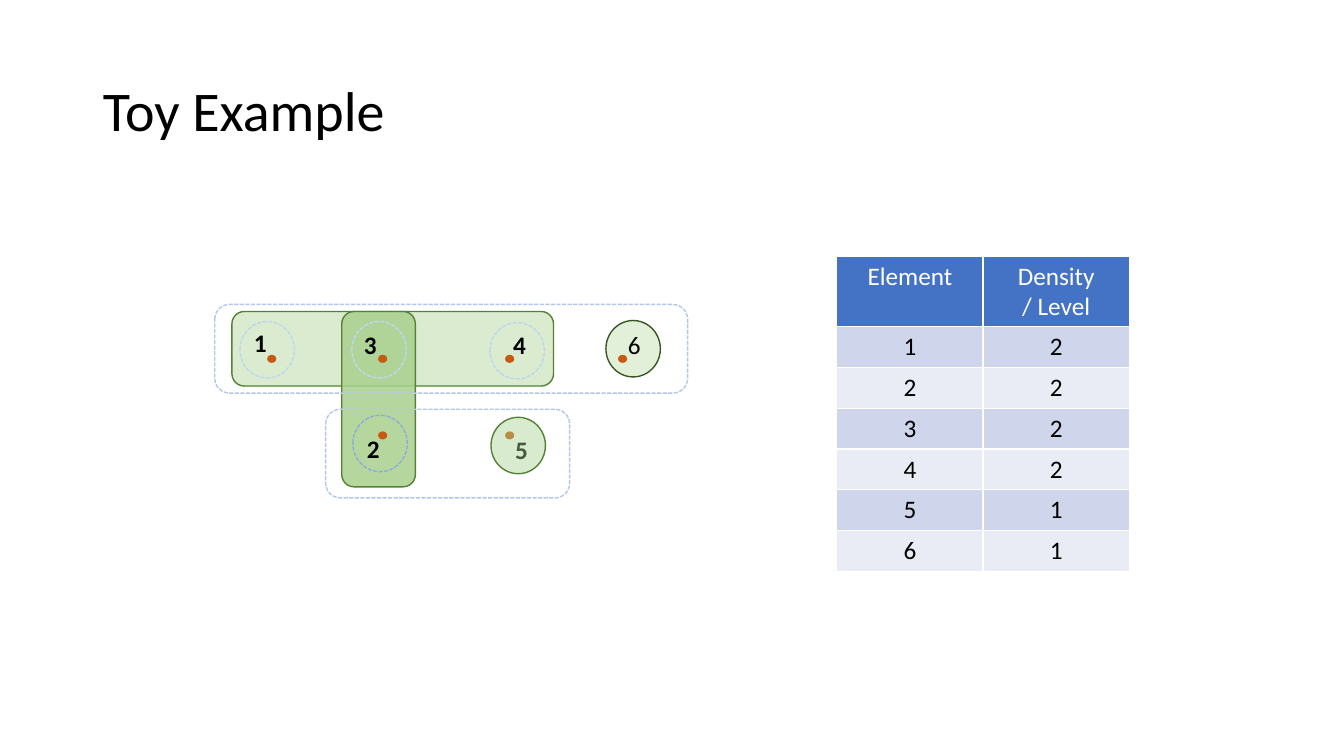
from lxml import etree
from pptx import Presentation
from pptx.dml.color import RGBColor
from pptx.enum import dml, shapes, text
from pptx.oxml import ns
from pptx.util import Inches, Pt

BLACK = RGBColor(0x00, 0x00, 0x00)
WHITE = RGBColor(0xFF, 0xFF, 0xFF)
GREEN = RGBColor(0xA9, 0xD1, 0x8E)
PALE_GREEN = RGBColor(0xE2, 0xF0, 0xD9)
MID_GREEN = RGBColor(0x54, 0x82, 0x35)
DARK_GREEN = RGBColor(0x38, 0x57, 0x23)
ORANGE = RGBColor(0xC5, 0x5A, 0x11)
SKY = RGBColor(0xBD, 0xD7, 0xEE)
STEEL = RGBColor(0x8F, 0xAA, 0xDC)
LAVENDER = RGBColor(0xB4, 0xC7, 0xE7)
HEADER_BLUE = RGBColor(0x44, 0x72, 0xC4)
BANDS = (RGBColor(0xCF, 0xD5, 0xEA), RGBColor(0xE9, 0xEB, 0xF5))

TITLE = "Toy Example"
HEADER = ("Element", "Density\n/ Level")
DENSITIES = {1: 2, 2: 2, 3: 2, 4: 2, 5: 1, 6: 1}

ROUNDED = shapes.MSO_SHAPE.ROUNDED_RECTANGLE
OVAL = shapes.MSO_SHAPE.OVAL
RING = (0.54, 0.56)
DOT = (0.09, 0.08)
LABEL = (0.33, 0.4)
UPPER_DOTS, LOWER_DOTS = 3.52, 4.28

# left, top of each ring and its format, below and above the labels
ROW_SET = (2.3, 3.09, 3.19, 0.74)
COLUMN_SET = (3.39, 3.09, 0.73, 1.74)
RINGS_UNDER_COLUMN = [
    (6.01, 3.18, dict(fill=PALE_GREEN, line=DARK_GREEN)),
    (4.86, 3.2, dict(line=SKY, dashed=True)),
]
RINGS_OVER_COLUMN = [
    (2.38, 3.19, dict(line=SKY, dashed=True)),
    (3.49, 3.19, dict(line=SKY, dashed=True)),
]
RINGS_OVER_LABELS = [
    (3.5, 4.12, dict(line=STEEL, dashed=True)),
    (4.87, 4.14, dict(fill=GREEN, opacity=43, line=MID_GREEN)),
]
DOTS = [(x, UPPER_DOTS) for x in (3.75, 5.01, 2.65, 6.13)]
DOTS += [(x, LOWER_DOTS) for x in (3.75, 5.01)]
LABELS = [
    ("1", 2.42, 3.2), ("3", 3.51, 3.22), ("2", 3.54, 4.25),
    ("4", 4.99, 3.22), ("5", 5.01, 4.26), ("6", 6.13, 3.22),
]
LEVELS = [(3.23, 4.06, 2.42, 0.88), (2.13, 3.02, 4.69, 0.88)]

TABLE_LEFT, TABLE_TOP = 8.3, 2.54
COLUMN_WIDTH, HEADER_HEIGHT, ROW_HEIGHT = 1.45, 0.7, 0.405


def write(frame, wording, size=18, color=BLACK, bold=False, align=None, spacing=None):
    frame.text = wording
    for paragraph in frame.paragraphs:
        paragraph.alignment = align
        paragraph.line_spacing = spacing
        font = paragraph.font
        font.name, font.size, font.bold = "Calibri", Pt(size), bold
        font.color.rgb = color


def draw(slide, preset, box, fill=None, opacity=100, line=None, dashed=False):
    shape = slide.shapes.add_shape(preset, *map(Inches, box))
    shape.shadow.inherit = False
    if fill is None:
        shape.fill.background()
    else:
        shape.fill.solid()
        shape.fill.fore_color.rgb = fill
        if opacity < 100:
            color = shape.fill._xPr.find(".//" + ns.qn("a:srgbClr"))
            etree.SubElement(color, ns.qn("a:alpha"), val=str(opacity * 1000))
    if line is None:
        shape.line.fill.background()
    else:
        shape.line.color.rgb = line
        shape.line.width = Pt(1)
        if dashed:
            shape.line.dash_style = dml.MSO_LINE.SQUARE_DOT


def draw_rings(slide, rings):
    for left, top, style in rings:
        draw(slide, OVAL, (left, top, *RING), **style)


def draw_sets(slide):
    draw(slide, ROUNDED, ROW_SET, fill=GREEN, opacity=42, line=MID_GREEN)
    draw_rings(slide, RINGS_UNDER_COLUMN)
    draw(slide, ROUNDED, COLUMN_SET, fill=GREEN, opacity=85, line=MID_GREEN)
    draw_rings(slide, RINGS_OVER_COLUMN)
    for left, top in DOTS:
        draw(slide, OVAL, (left, top, *DOT), fill=ORANGE)
    for element, left, top in LABELS:
        label = slide.shapes.add_textbox(*map(Inches, (left, top, *LABEL)))
        label.text_frame.word_wrap = False
        write(label.text_frame, element, bold=element != "6")
    draw_rings(slide, RINGS_OVER_LABELS)
    for level in LEVELS:
        draw(slide, ROUNDED, level, line=LAVENDER, dashed=True)


def add_density_table(slide):
    rows = [HEADER, *DENSITIES.items()]
    heights = [HEADER_HEIGHT] + [ROW_HEIGHT] * len(DENSITIES)
    box = (TABLE_LEFT, TABLE_TOP, COLUMN_WIDTH * len(HEADER), sum(heights))
    table = slide.shapes.add_table(len(rows), len(HEADER), *map(Inches, box)).table
    for column in table.columns:
        column.width = Inches(COLUMN_WIDTH)
    for r, (row, height) in enumerate(zip(rows, heights)):
        table.rows[r].height = Inches(height)
        for c, value in enumerate(row):
            cell = table.cell(r, c)
            cell.fill.solid()
            cell.fill.fore_color.rgb = BANDS[(r - 1) % 2] if r else HEADER_BLUE
            write(cell.text_frame, str(value), color=BLACK if r else WHITE,
                  align=text.PP_ALIGN.CENTER)


def main():
    deck = Presentation()
    deck.slide_width, deck.slide_height = Inches(13.33), Inches(7.5)
    slide = deck.slides.add_slide(deck.slide_layouts[5])
    title = slide.shapes.title
    title.left, title.top = Inches(0.92), Inches(0.4)
    title.width, title.height = Inches(11.5), Inches(1.45)
    title.text_frame.vertical_anchor = text.MSO_ANCHOR.MIDDLE
    write(title.text_frame, TITLE, size=40, align=text.PP_ALIGN.LEFT, spacing=0.9)
    draw_sets(slide)
    add_density_table(slide)
    deck.save("out.pptx")


if __name__ == "__main__":
    main()
